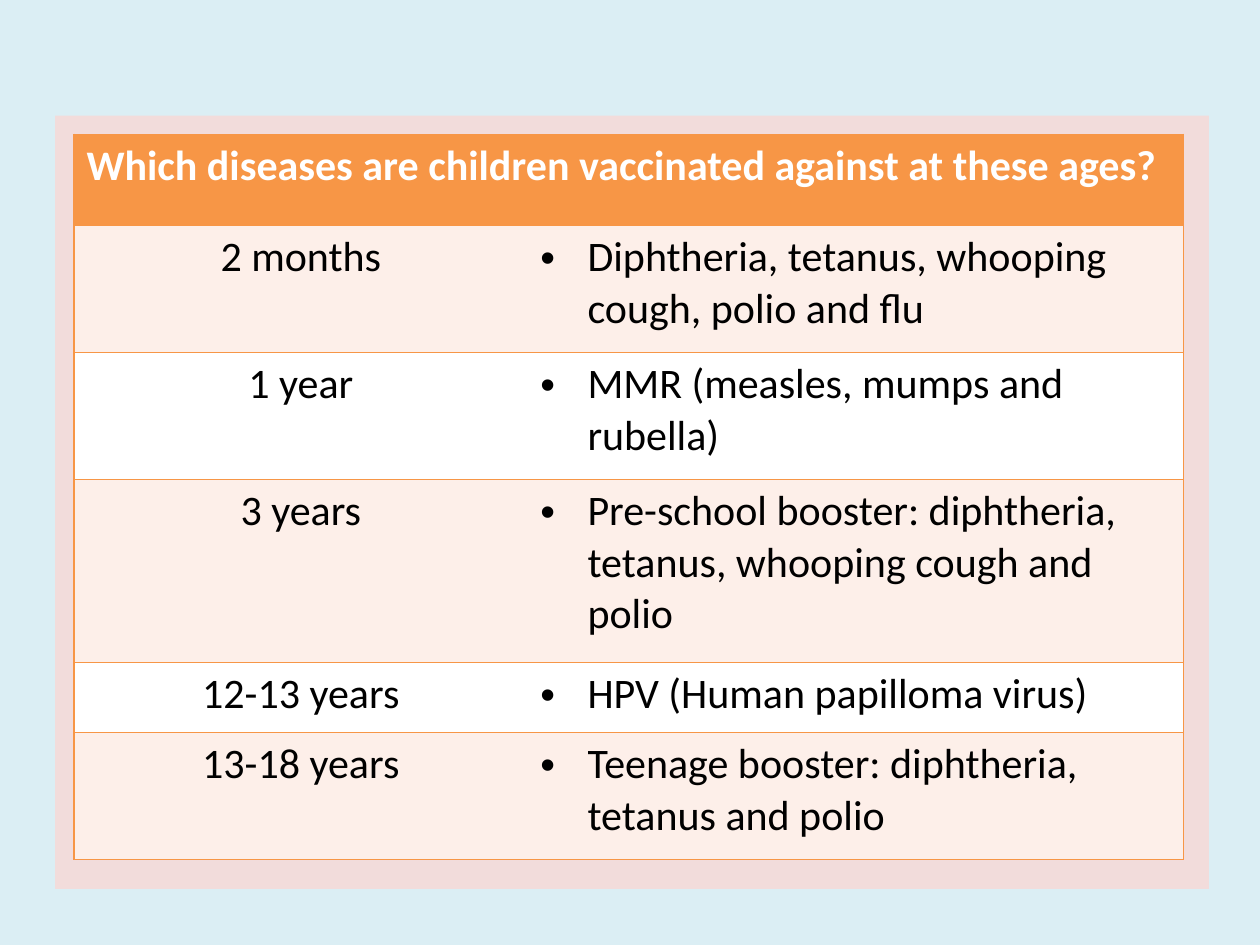
from lxml.etree import SubElement
from pptx import Presentation
from pptx.dml.color import RGBColor
from pptx.enum.shapes import MSO_SHAPE
from pptx.enum.text import PP_ALIGN
from pptx.oxml.ns import qn
from pptx.util import Cm, Pt

SKY = RGBColor(0xDB, 0xEE, 0xF4)
PINK = RGBColor(0xF2, 0xDC, 0xDB)
ORANGE = RGBColor(0xF7, 0x96, 0x46)
PEACH = RGBColor(0xFD, 0xEF, 0xE9)
WHITE = RGBColor(0xFF, 0xFF, 0xFF)
BLACK = RGBColor(0x00, 0x00, 0x00)

TITLE = "Which diseases are children vaccinated against at these ages?"
VACCINATIONS = [
    ("2 months", "Diphtheria, tetanus, whooping cough, polio and flu"),
    ("1 year", "MMR (measles, mumps and rubella)"),
    ("3 years", "Pre-school booster: diphtheria, tetanus, whooping cough and polio"),
    ("12-13 years", "HPV (Human papilloma virus)"),
    ("13-18 years", "Teenage booster: diphtheria, tetanus and polio"),
]
COLUMN_WIDTHS = [Cm(9.15), Cm(13.22)]
ROW_HEIGHTS = [Cm(1.84), Cm(2.56), Cm(2.56), Cm(3.69), Cm(1.41), Cm(2.56)]


def style_cell(cell, fill_color, open_side=None):
    """Fill the cell and draw its borders, leaving open_side without a line."""
    properties = cell._tc.get_or_add_tcPr()
    for side in ("lnL", "lnR", "lnT", "lnB"):
        line = SubElement(properties, qn(f"a:{side}"), w=str(Pt(1)))
        if side == open_side:
            SubElement(line, qn("a:noFill"))
        else:
            fill = SubElement(line, qn("a:solidFill"))
            SubElement(fill, qn("a:srgbClr"), val=str(ORANGE))
    cell.fill.solid()
    cell.fill.fore_color.rgb = fill_color


def add_text(cell, text, color, bold=False):
    paragraph = cell.text_frame.paragraphs[0]
    run = paragraph.add_run()
    run.text = text
    run.font.name = "Calibri"
    run.font.size = Pt(24)
    run.font.bold = bold
    run.font.color.rgb = color
    return paragraph


presentation = Presentation()
presentation.slide_width = Cm(25.4)
presentation.slide_height = Cm(19.05)
slide = presentation.slides.add_slide(presentation.slide_layouts[6])
slide.background.fill.solid()
slide.background.fill.fore_color.rgb = SKY

panel = slide.shapes.add_shape(
    MSO_SHAPE.RECTANGLE, Cm(1.11), Cm(2.33), Cm(23.26), Cm(15.59))
panel.shadow.inherit = False
panel.fill.solid()
panel.fill.fore_color.rgb = PINK
panel.line.fill.background()

table = slide.shapes.add_table(
    len(ROW_HEIGHTS), len(COLUMN_WIDTHS), Cm(1.49), Cm(2.71),
    sum(COLUMN_WIDTHS), sum(ROW_HEIGHTS)).table
table.first_row = False
table.horz_banding = False
for column, width in zip(table.columns, COLUMN_WIDTHS):
    column.width = width
for row, height in zip(table.rows, ROW_HEIGHTS):
    row.height = height

header = table.cell(0, 0)
header.merge(table.cell(0, 1))
style_cell(header, ORANGE)
style_cell(table.cell(0, 1), ORANGE)
add_text(header, TITLE, WHITE, bold=True)

for row_index, (age, diseases) in enumerate(VACCINATIONS, start=1):
    fill_color = PEACH if row_index % 2 else WHITE
    age_cell = table.cell(row_index, 0)
    style_cell(age_cell, fill_color, open_side="lnR")
    add_text(age_cell, age, BLACK).alignment = PP_ALIGN.CENTER

    disease_cell = table.cell(row_index, 1)
    style_cell(disease_cell, fill_color, open_side="lnL")
    paragraph = add_text(disease_cell, diseases, BLACK)
    properties = paragraph._p.get_or_add_pPr()
    properties.set("marL", str(Cm(0.95)))
    properties.set("indent", str(-Cm(0.95)))
    SubElement(properties, qn("a:buFont"), typeface="Arial")
    SubElement(properties, qn("a:buChar"), char="•")

presentation.save("out.pptx")
